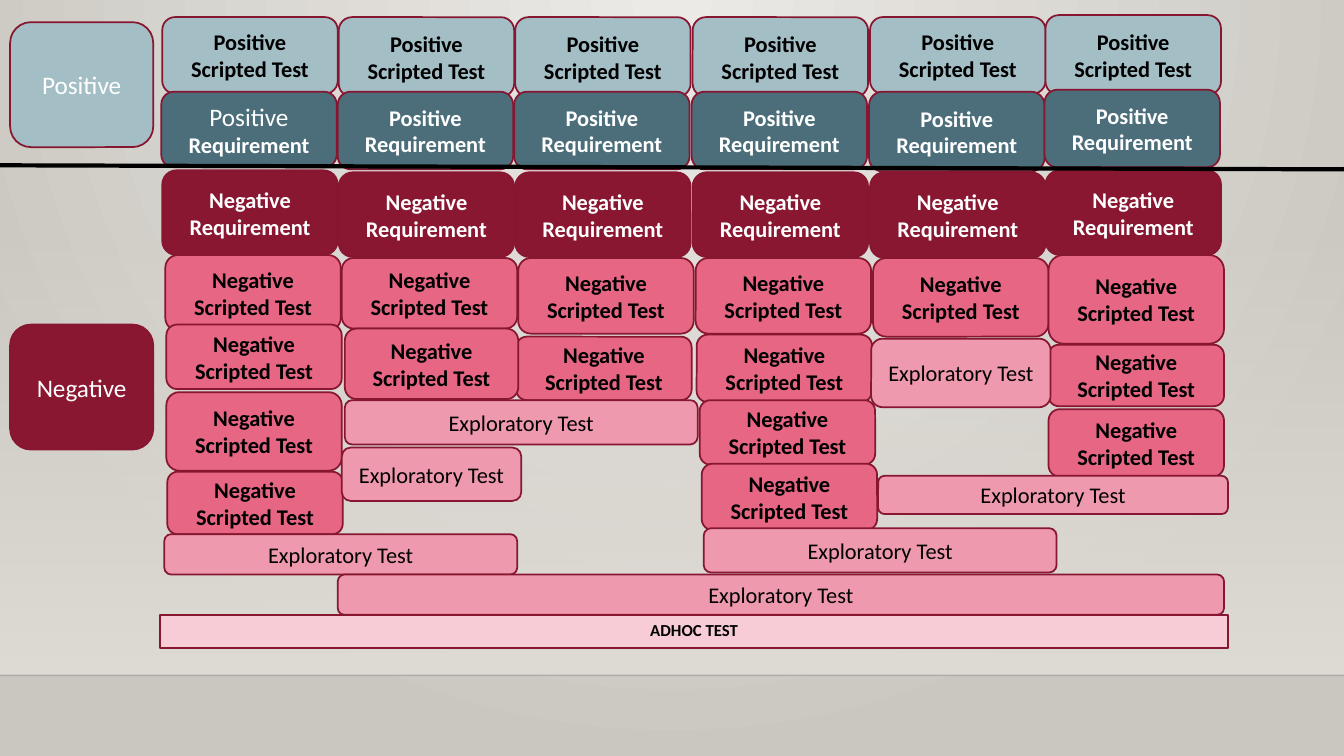
from dataclasses import dataclass

from lxml.etree import SubElement
from pptx import Presentation
from pptx.dml.color import RGBColor
from pptx.enum.shapes import MSO_CONNECTOR, MSO_SHAPE
from pptx.enum.text import MSO_ANCHOR, MSO_AUTO_SIZE, PP_ALIGN
from pptx.oxml.ns import qn
from pptx.util import Inches, Pt

FONT = "Calibri"
BLACK = RGBColor(0x00, 0x00, 0x00)
WHITE = RGBColor(0xFF, 0xFF, 0xFF)
EDGE = RGBColor(0x87, 0x16, 0x31)
WINE = RGBColor(0x89, 0x17, 0x31)
ROSE = RGBColor(0xE6, 0x66, 0x84)
PINK = RGBColor(0xEE, 0x99, 0xAD)
BLUSH = RGBColor(0xF7, 0xCC, 0xD6)
MIST = RGBColor(0xA4, 0xBE, 0xC6)
TEAL = RGBColor(0x4C, 0x6E, 0x7A)
GLOW = RGBColor(0xEC, 0xEA, 0xE7)
STONE = RGBColor(0xCA, 0xC7, 0xC1)
SAND = RGBColor(0xDF, 0xDB, 0xD5)
RULE = RGBColor(0x00, 0x00, 0x01)


@dataclass(frozen=True)
class Style:
    text: str
    fill: RGBColor
    ink: RGBColor = BLACK
    size: int = 16
    bold: bool = True


@dataclass(frozen=True)
class Row:
    """Six cards side by side, shifted from the common columns."""
    style: Style
    shift: float
    tops: tuple
    heights: tuple


POS_TEST = Style("Positive Scripted Test", MIST)
POS_REQ = Style("Positive Requirement", TEAL, WHITE)
NEG_REQ = Style("Negative Requirement", WINE, WHITE)
NEG_TEST = Style("Negative Scripted Test", ROSE)
EXPLORE = Style("Exploratory Test", PINK, bold=False)
ADHOC = Style("ADHOC TEST", BLUSH, size=12)
POS_SIDE = Style("Positive", MIST, WHITE, 18, False)
NEG_SIDE = Style("Negative", WINE, WHITE, 18, False)

WIDE = 1.74
COLUMNS = (1.61, 3.36, 5.11, 6.87, 8.63, 10.37)
ROWS = (
    Row(NEG_TEST, 0.03, (2.53, 2.56, 2.56, 2.56, 2.56, 2.53),
        (0.75, 0.7, 0.75, 0.75, 0.78, 0.88)),
    Row(POS_TEST, 0, (0.17,) * 5 + (0.15,),
        (0.76, 0.79, 0.79, 0.79, 0.76, 0.79)),
    Row(POS_REQ, -0.01, (0.91,) * 5 + (0.89,),
        (0.75, 0.77, 0.77, 0.77, 0.79, 0.77)),
    Row(NEG_REQ, 0, (1.69,) + (1.71,) * 4 + (1.69,),
        (0.84, 0.84, 0.84, 0.84, 0.85, 0.84)),
)
# Left, top, width, height
TESTS = (
    (1.65, 3.22, WIDE, 0.64), (1.65, 3.89, WIDE, 0.78),
    (10.4, 4.06, WIDE, 0.67), (5.12, 3.34, WIDE, 0.63),
    (10.4, 3.42, WIDE, 0.61), (6.91, 3.32, WIDE, 0.67),
    (6.94, 3.97, WIDE, 0.64), (3.42, 3.26, 1.72, 0.7),
    (6.96, 4.6, WIDE, 0.66), (1.66, 4.68, WIDE, 0.62),
)
PROBES = (
    (3.42, 3.97, 3.5, 0.44), (6.98, 5.24, 3.5, 0.44),
    (8.71, 4.72, 3.47, 0.38), (1.63, 5.3, 3.5, 0.4),
    (8.64, 3.36, 1.78, 0.68), (3.35, 5.7, 8.79, 0.4),
    (3.39, 4.44, 1.78, 0.53),
)


def dress(shape, style: Style):
    """Apply fill, outline and centred text; return the paragraph."""
    shape.fill.solid()
    shape.fill.fore_color.rgb = style.fill
    shape.line.color.rgb = EDGE
    shape.line.width = Pt(1.25)
    frame = shape.text_frame
    frame.word_wrap = True
    frame.auto_size = MSO_AUTO_SIZE.NONE
    frame.vertical_anchor = MSO_ANCHOR.MIDDLE
    frame.text = style.text
    para = frame.paragraphs[0]
    para.alignment = PP_ALIGN.CENTER
    font = para.font
    font.name, font.size, font.bold = FONT, Pt(style.size), style.bold
    font.color.rgb = style.ink
    return para


def draw_card(shapes, style: Style, box: tuple):
    shape = shapes.add_shape(MSO_SHAPE.ROUNDED_RECTANGLE, *map(Inches, box))
    shape.shadow.inherit = False
    return dress(shape, style)


def draw_row(shapes, row: Row) -> list:
    group = shapes.add_group_shape()
    return [draw_card(group.shapes, row.style, (left + row.shift, top, WIDE, high))
            for left, top, high in zip(COLUMNS, row.tops, row.heights)]


def draw_line(shapes, start: float, end: float, color: RGBColor, width: float):
    """Draw a line across the slide between two heights."""
    line = shapes.add_connector(MSO_CONNECTOR.STRAIGHT, 0, Inches(start),
                                Inches(13.33), Inches(end))
    line.line.color.rgb = color
    line.line.width = Pt(width)
    SubElement(line.element.spPr, qn("a:effectLst"))
    return line


def set_stops(fill, first: RGBColor, last: RGBColor) -> None:
    fill.gradient()
    for stop, color in zip(fill.gradient_stops, (first, last)):
        stop.color.rgb = color


def set_alpha(element, percent: int) -> None:
    """Make the first colour inside the element translucent."""
    color = next(element.iter(qn("a:srgbClr")))
    SubElement(color, qn("a:alpha"), val=str(percent * 1000))


def draw_back(slide) -> None:
    set_stops(slide.background.fill, GLOW, STONE)
    grad = next(slide.element.iter(qn("a:gradFill")))
    grad.remove(grad.find(qn("a:lin")))
    radial = SubElement(grad, qn("a:path"), path="circle")
    SubElement(radial, qn("a:fillToRect"), l="43000", t="0", r="43000", b="100000")

    wall = slide.shapes.add_shape(MSO_SHAPE.RECTANGLE, 0, Inches(2.21),
                                  Inches(13.33), Inches(4.49))
    wall.shadow.inherit = False
    wall.line.fill.background()
    set_stops(wall.fill, SAND, SAND)
    wall.fill.gradient_angle = 270
    set_alpha(wall.element.spPr, 0)
    floor = draw_line(slide.shapes, 6.7, 6.7, RULE, 1)
    set_alpha(floor.element.spPr, 20)


def draw_title(slide) -> None:
    title = slide.shapes.title
    title.left, title.top, title.width, title.height = map(
        Inches, (1.59, 6.1, 10.59, 0.33))
    dress(title, ADHOC).line_spacing = 0.9
    title.element.getparent().append(title.element)


def main() -> None:
    deck = Presentation()
    deck.slide_width, deck.slide_height = Inches(13.33), Inches(7.5)
    slide = deck.slides.add_slide(deck.slide_layouts[5])
    shapes = slide.shapes
    draw_back(slide)

    for row in ROWS:
        cards = draw_row(shapes, row)
        if row.style is POS_REQ:
            lead = cards[0].runs[0]
            lead.text = "Positive"
            lead.font.size, lead.font.bold = Pt(18), False
            cards[0].add_run().text = " Requirement"

    for style, boxes in ((NEG_TEST, TESTS), (EXPLORE, PROBES)):
        for box in boxes:
            draw_card(shapes, style, box)
    draw_title(slide)
    draw_line(shapes, 1.64, 1.68, BLACK, 3)
    for style, top in ((POS_SIDE, 0.22), (NEG_SIDE, 3.22)):
        draw_card(shapes, style, (0.1, top, 1.42, 1.24))
    deck.save("out.pptx")


if __name__ == "__main__":
    main()
